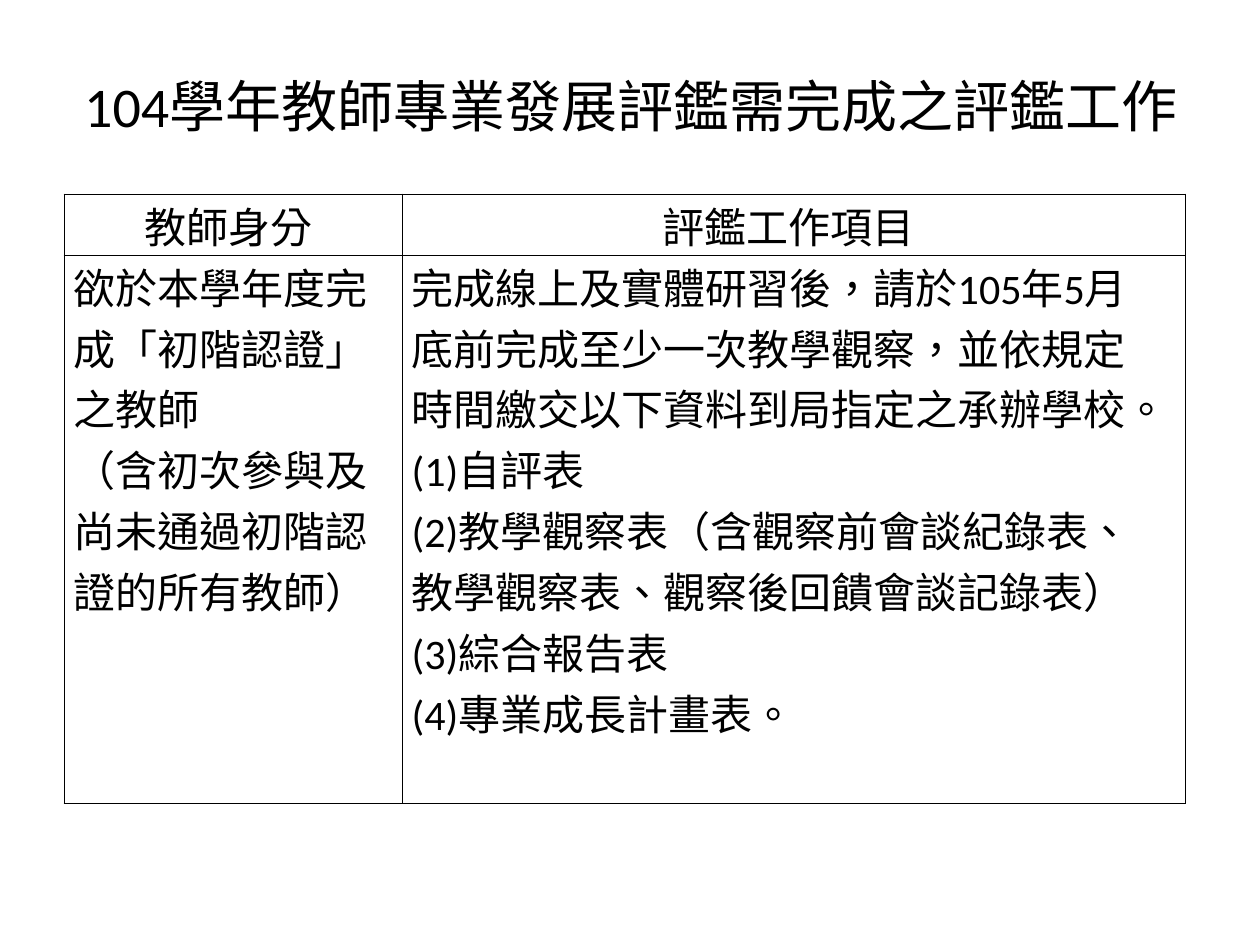
from dataclasses import dataclass

from lxml import etree
from pptx import Presentation, util as u
from pptx.dml.color import RGBColor
from pptx.enum import text
from pptx.oxml.ns import qn


@dataclass(frozen=True)
class Theme:
    font: str = "Calibri"
    ink: str = "000000"
    head: int = 32
    body: int = 24
    line: float = 1


def write(frame, *lines, theme, size, align=text.PP_ALIGN.LEFT):
    """Put each line in its own paragraph of the frame."""
    for i, line in enumerate(lines):
        para = frame.add_paragraph() if i else frame.paragraphs[0]
        para.alignment = align
        run = para.add_run()
        run.text = line
        run.font.name = theme.font
        run.font.size = u.Pt(size)
        run.font.color.rgb = RGBColor.from_string(theme.ink)
        run._r.get_or_add_rPr().set("lang", "zh-TW")


def border(cell, theme):
    """Draw all four sides, placed ahead of the fill as the schema asks."""
    props = cell._tc.get_or_add_tcPr()
    for i, side in enumerate(("lnL", "lnR", "lnT", "lnB")):
        line = etree.Element(qn(f"a:{side}"), w=str(u.Pt(theme.line)))
        fill = etree.SubElement(line, qn("a:solidFill"))
        etree.SubElement(fill, qn("a:srgbClr"), val=theme.ink)
        props.insert(i, line)


class Deck:
    def __init__(self, theme):
        self.theme = theme
        self.show = Presentation()
        self.show.slide_width = u.Cm(25.4)
        self.show.slide_height = u.Cm(19.05)
        self.slide = self.show.slides.add_slide(self.show.slide_layouts[5])

    def title(self, line, x, y, w, h):
        box = self.slide.shapes.title
        box.left, box.top, box.width, box.height = map(u.Cm, (x, y, w, h))
        box.text_frame.vertical_anchor = text.MSO_ANCHOR.MIDDLE
        write(box.text_frame, line, theme=self.theme, size=self.theme.head,
              align=text.PP_ALIGN.CENTER)

    def table(self, rows, x, y, cols, highs):
        """Fill a grid whose first row is centred as a header."""
        grid = self.slide.shapes.add_table(
            len(rows), len(cols), u.Cm(x), u.Cm(y),
            u.Cm(sum(cols)), u.Cm(sum(highs))).table
        for col, wide in zip(grid.columns, cols):
            col.width = u.Cm(wide)
        for r, (row, high) in enumerate(zip(rows, highs)):
            grid.rows[r].height = u.Cm(high)
            for c, lines in enumerate(row):
                self.cell(grid.cell(r, c), lines, head=r == 0)

    def cell(self, cell, lines, head):
        cell.margin_left = u.Cm(0.19)
        cell.margin_right = u.Cm(0.4)
        cell.margin_top = cell.margin_bottom = 0
        cell.fill.background()
        border(cell, self.theme)
        align = text.PP_ALIGN.CENTER if head else text.PP_ALIGN.LEFT
        write(cell.text_frame, *lines, theme=self.theme,
              size=self.theme.body, align=align)

    def save(self):
        self.show.save("out.pptx")


ROWS = [
    (["教師身分"], ["評鑑工作項目"]),
    (
        ["欲於本學年度完成「初階認證」之教師",
         "（含初次參與及尚未通過初階認證的所有教師）"],
        ["完成線上及實體研習後，請於105年5月底前完成至少一次教學觀察，"
         "並依規定時間繳交以下資料到局指定之承辦學校。",
         "(1)自評表",
         "(2)教學觀察表（含觀察前會談紀錄表、教學觀察表、觀察後回饋會談記錄表）",
         "(3)綜合報告表",
         "(4)專業成長計畫表。"],
    ),
]


def main():
    deck = Deck(Theme())
    deck.title("104學年教師專業發展評鑑需完成之評鑑工作", 1.3, 0.53, 22.86, 3.18)
    deck.table(ROWS, x=1.3, y=3.92, cols=(6.81, 15.79), highs=(1.2, 9.6))
    deck.save()


if __name__ == "__main__":
    main()
